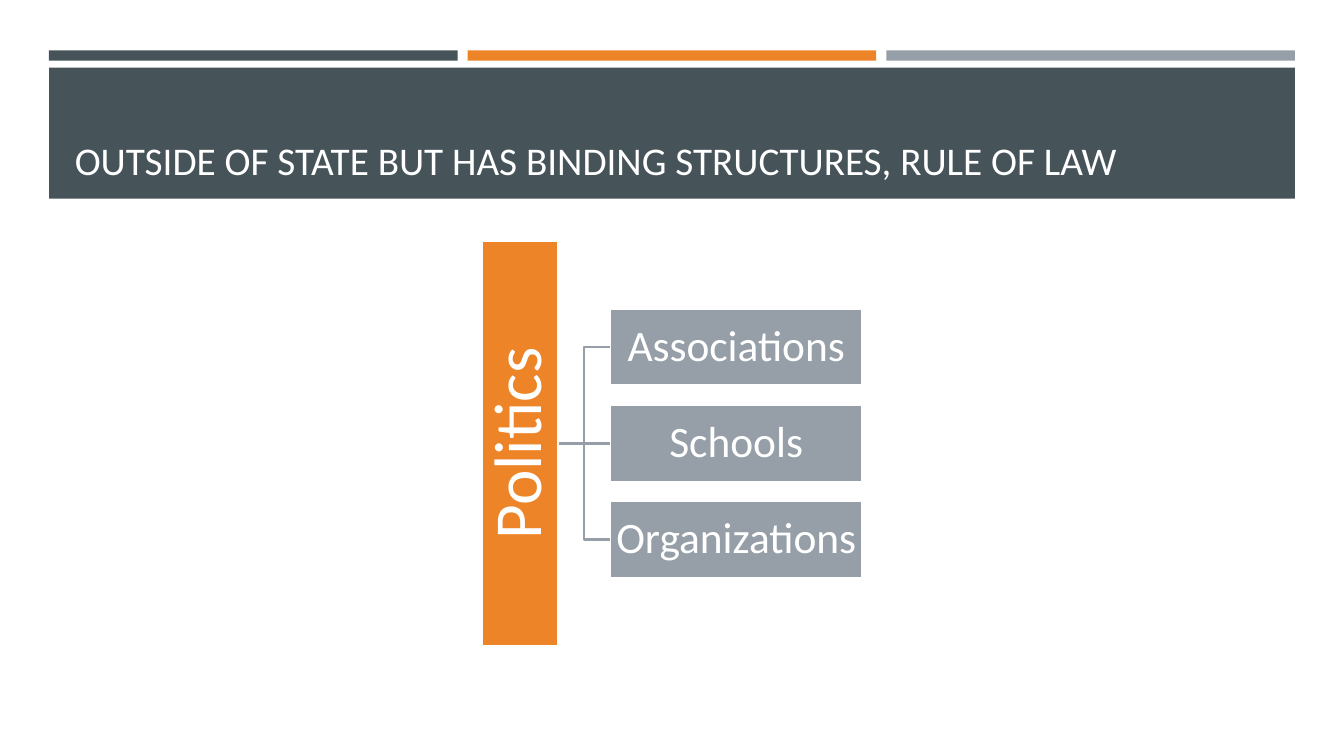
from lxml.etree import SubElement
from pptx import Presentation
from pptx.dml.color import RGBColor
from pptx.enum.shapes import MSO_CONNECTOR, MSO_SHAPE
from pptx.enum.text import MSO_ANCHOR, MSO_AUTO_SIZE, PP_ALIGN
from pptx.oxml.ns import qn
from pptx.util import Pt

COLORS = {"slate": "465359", "orange": "ED8428", "gray": "969FA7", "white": "FFFFFF"}
FONT = "Calibri"


def color(name):
    return RGBColor.from_string(COLORS[name])


def add_rect(s, x, y, w, h, fill, line=None):
    sp = s.shapes.add_shape(MSO_SHAPE.RECTANGLE, Pt(x), Pt(y), Pt(w), Pt(h))
    sp.shadow.inherit = False
    sp.fill.solid()
    sp.fill.fore_color.rgb = color(fill)
    if line:
        sp.line.color.rgb = color(line)
        sp.line.width = Pt(1.75)
    else:
        sp.line.fill.background()
    return sp


def format_text(tf, text, size, align, anchor):
    tf.text = text
    tf.word_wrap = True
    tf.auto_size = MSO_AUTO_SIZE.NONE
    tf.vertical_anchor = anchor
    p = tf.paragraphs[0]
    p.alignment = align
    p.line_spacing = 0.9
    p.font.name = FONT
    p.font.size = Pt(size)
    p.font.color.rgb = color("white")


def add_node(s, text, size, inset, x, y, w, h, fill):
    sp = add_rect(s, x, y, w, h, fill, "white")
    tf = sp.text_frame
    tf.margin_left = tf.margin_right = tf.margin_top = tf.margin_bottom = Pt(inset)
    format_text(tf, text, size, PP_ALIGN.CENTER, MSO_ANCHOR.MIDDLE)
    return sp


def add_header(s, title, x, y, w, h):
    # Three accent bars
    gap, bar_h = 7.2, 7.4
    bar_w = (w - 2 * gap) / 3
    for i, fill in enumerate(("slate", "orange", "gray")):
        add_rect(s, x + i * (bar_w + gap), y, bar_w, bar_h, fill)

    # Title on its band
    band_y = y + 12.4
    band_h = h - 12.4
    add_rect(s, x, band_y, w, band_h, "slate")
    sp = s.shapes.title
    sp.element.getparent().append(sp.element)  # bring in front of the band
    sp.left, sp.top = Pt(x + 11.2), Pt(band_y + 7)
    sp.width, sp.height = Pt(w - 22.4), Pt(band_h - 14)
    format_text(sp.text_frame, title, 28, PP_ALIGN.LEFT, MSO_ANCHOR.BOTTOM)


def add_hierarchy(s, root_text, items, x, y, w, h):
    node_h, item_w = 55, 180.7
    pitch = node_h * 1.25
    item_x = x + w - item_w
    middle = (len(items) - 1) / 2

    # Root with text turned upwards
    root = add_node(s, root_text, 48, 2.2, x, y, node_h, h, "orange")
    root.text_frame._txBody.bodyPr.set("vert", "vert270")

    # Items centred on the root, each joined to it
    for i, text in enumerate(items):
        item_y = y + (h - node_h) / 2 + (i - middle) * pitch
        item = add_node(s, text, 31, 1.4, item_x, item_y, item_w, node_h, "gray")
        kind = MSO_CONNECTOR.STRAIGHT if i == middle else MSO_CONNECTOR.ELBOW
        link = s.shapes.add_connector(kind, 0, 0, 0, 0)
        link.begin_connect(root, 3)
        link.end_connect(item, 1)
        link.line.color.rgb = color("gray")
        link.line.width = Pt(1.75)
        SubElement(link.element.spPr, qn("a:effectLst"))


def main():
    prs = Presentation()
    prs.slide_width, prs.slide_height = Pt(960), Pt(540)
    s = prs.slides.add_slide(prs.slide_layouts[5])
    add_header(s, "OUTSIDE OF STATE BUT HAS BINDING STRUCTURES, RULE OF LAW",
               35, 36, 890, 106)
    add_hierarchy(s, "Politics", ("Associations", "Schools", "Organizations"),
                  344, 172, 272.2, 289.4)
    prs.save("out.pptx")


if __name__ == "__main__":
    main()
